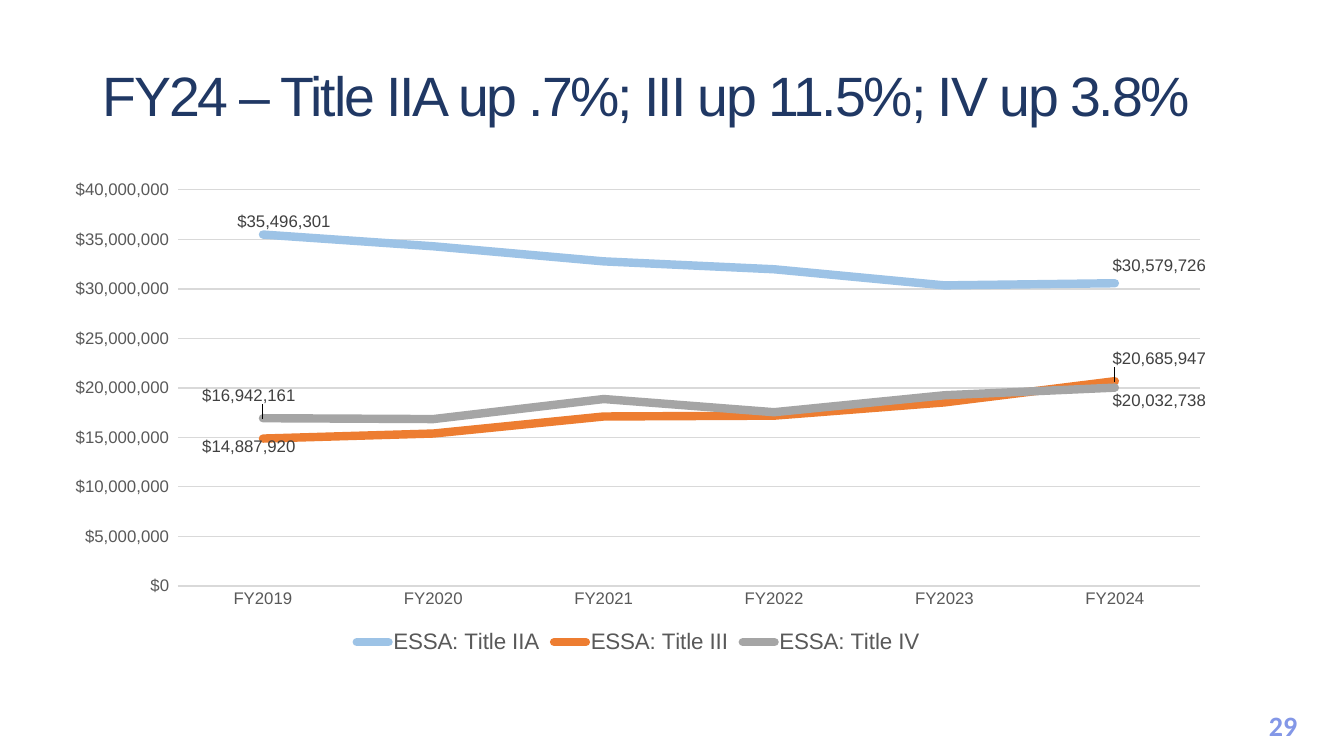
from dataclasses import dataclass

from lxml import etree
from pptx import Presentation
from pptx.chart.data import CategoryChartData
from pptx.dml.color import RGBColor
from pptx.enum.chart import (XL_CHART_TYPE, XL_LABEL_POSITION,
                             XL_LEGEND_POSITION, XL_MARKER_STYLE, XL_TICK_MARK)
from pptx.enum.text import MSO_ANCHOR, PP_ALIGN
from pptx.oxml.ns import qn
from pptx.util import Pt

LINE = XL_CHART_TYPE.LINE_MARKERS
ABOVE, BELOW = XL_LABEL_POSITION.ABOVE, XL_LABEL_POSITION.BELOW
BOTTOM = XL_LEGEND_POSITION.BOTTOM
NO_MARK, NO_TICK = XL_MARKER_STYLE.NONE, XL_TICK_MARK.NONE
LEFT, CENTER, MIDDLE = PP_ALIGN.LEFT, PP_ALIGN.CENTER, MSO_ANCHOR.MIDDLE
MONEY = '"$"#,##0_);[Red]\\("$"#,##0\\)'


@dataclass
class Theme:
    font: str = "Arial"
    page_font: str = "Calibri"
    navy: str = "203864"
    page: str = "8397E7"
    axis: str = "595959"
    label: str = "404040"
    grid: str = "D9D9D9"
    title_size: float = 39.6
    page_size: float = 20
    legend_size: float = 16
    small: float = 12


YEARS = [f"FY{year}" for year in range(2019, 2025)]
# Name, colour, values, and labels: point -> (side, x shift, y shift)
GRANTS = [
    ("ESSA: Title IIA", "9DC3E6",
     (35496301, 34309648, 32788722, 31989107, 30362569, 30579726),
     {0: (ABOVE, 0.02, 0), 5: (ABOVE, 0.04, -0.01)}),
    ("ESSA: Title III", "ED7D31",
     (14887920, 15395832, 17114993, 17199595, 18544239, 20685947),
     {0: (BELOW, -0.01, -0.01), 5: (ABOVE, 0.04, -0.02)}),
    ("ESSA: Title IV", "A5A5A5",
     (16942161, 16857655, 18884495, 17554055, 19265685, 20032738),
     {0: (ABOVE, -0.01, -0.02), 5: (BELOW, 0.04, 0)}),
]


def layout(**parts):
    """Manual chart layout from its child values."""
    root = etree.Element(qn("c:layout"))
    manual = etree.SubElement(root, qn("c:manualLayout"))
    for tag, value in parts.items():
        etree.SubElement(manual, qn(f"c:{tag}")).set("val", str(value))
    return root


class Page:
    def __init__(self, deck, theme):
        self.theme = theme
        self.slide = deck.slides.add_slide(deck.slide_layouts[5])

    def style(self, font, size, color, name=None):
        font.name, font.size = name or self.theme.font, Pt(size)
        font.bold = False
        font.color.rgb = RGBColor.from_string(color)

    def stroke(self, line, color, width):
        line.color.rgb = RGBColor.from_string(color)
        line.width = Pt(width)

    def title(self, text, left, top, width, height):
        box = self.slide.shapes.title
        box.left, box.top = Pt(left), Pt(top)
        box.width, box.height = Pt(width), Pt(height)
        frame = box.text_frame
        frame.text, frame.vertical_anchor = text, MIDDLE
        para = frame.paragraphs[0]
        para.alignment, para.line_spacing = LEFT, 0.9
        run = para.runs[0]
        self.style(run.font, self.theme.title_size, self.theme.navy)
        run.font._element.set("spc", "-150")

    def number(self, text, left, top, width, height):
        box = self.slide.shapes.add_textbox(
            Pt(left), Pt(top), Pt(width), Pt(height))
        box.text_frame.word_wrap = True
        box.text_frame.text = text
        para = box.text_frame.paragraphs[0]
        para.alignment = CENTER
        font = para.runs[0].font
        self.style(font, self.theme.page_size, self.theme.page,
                   self.theme.page_font)
        font.bold = True

    def chart(self, years, grants, left, top, width, height):
        theme = self.theme
        data = CategoryChartData(number_format=MONEY)
        data.categories = years
        for name, _, values, _ in grants:
            data.add_series(name, values)
        chart = self.slide.shapes.add_chart(
            LINE, Pt(left), Pt(top), Pt(width), Pt(height), data).chart
        chart.has_title = False
        self.style(chart.font, theme.small, theme.axis)

        # Legend
        chart.has_legend = True
        chart.legend.position = BOTTOM
        chart.legend.include_in_layout = False
        self.style(chart.legend.font, theme.legend_size, theme.axis)

        # Axes and grid
        for axis in (chart.category_axis, chart.value_axis):
            axis.major_tick_mark = axis.minor_tick_mark = NO_TICK
            self.style(axis.tick_labels.font, theme.small, theme.axis)
        self.stroke(chart.category_axis.format.line, theme.grid, 0.75)
        scale = chart.value_axis
        scale.minimum_scale, scale.maximum_scale = 0, 40_000_000
        scale.major_unit = 5_000_000
        scale.format.line.fill.background()
        self.stroke(scale.major_gridlines.format.line, theme.grid, 0.75)
        scale.tick_labels.number_format = MONEY
        scale.tick_labels.number_format_is_linked = False

        # Plot area
        area = chart._chartSpace.chart.plotArea
        for old in area.findall(qn("c:layout")):
            area.remove(old)
        area.insert(0, layout(layoutTarget="inner", xMode="edge", yMode="edge",
                              x=0.107, y=0.038, w=0.873, h=0.813))

        # Lines and end labels
        plot = chart.plots[0]
        plot.vary_by_categories = False
        for series, (_, color, _, labels) in zip(plot.series, grants):
            series.smooth = False
            series.marker.style = NO_MARK
            self.stroke(series.format.line, color, 6)
            series.format.line._ln.set("cap", "rnd")
            series.data_labels.show_value = False
            for index, (side, x, y) in labels.items():
                label = series.points[index].data_label
                self.style(label.font, theme.small, theme.label)
                label.position = side
                node = series.data_labels._element.find(
                    f"{qn('c:dLbl')}[last()]")
                node.insert(1, layout(x=x, y=y))


def main():
    deck = Presentation()
    deck.slide_width, deck.slide_height = Pt(960), Pt(540)
    page = Page(deck, Theme())
    page.number("29", 894, 502.5, 45, 32)
    page.chart(YEARS, GRANTS, 37.5, 122.5, 836.5, 348)
    page.title("FY24 – Title IIA up .7%; III up 11.5%; IV up 3.8%",
               66, 29.5, 828, 82)
    deck.save("out.pptx")


if __name__ == "__main__":
    main()
